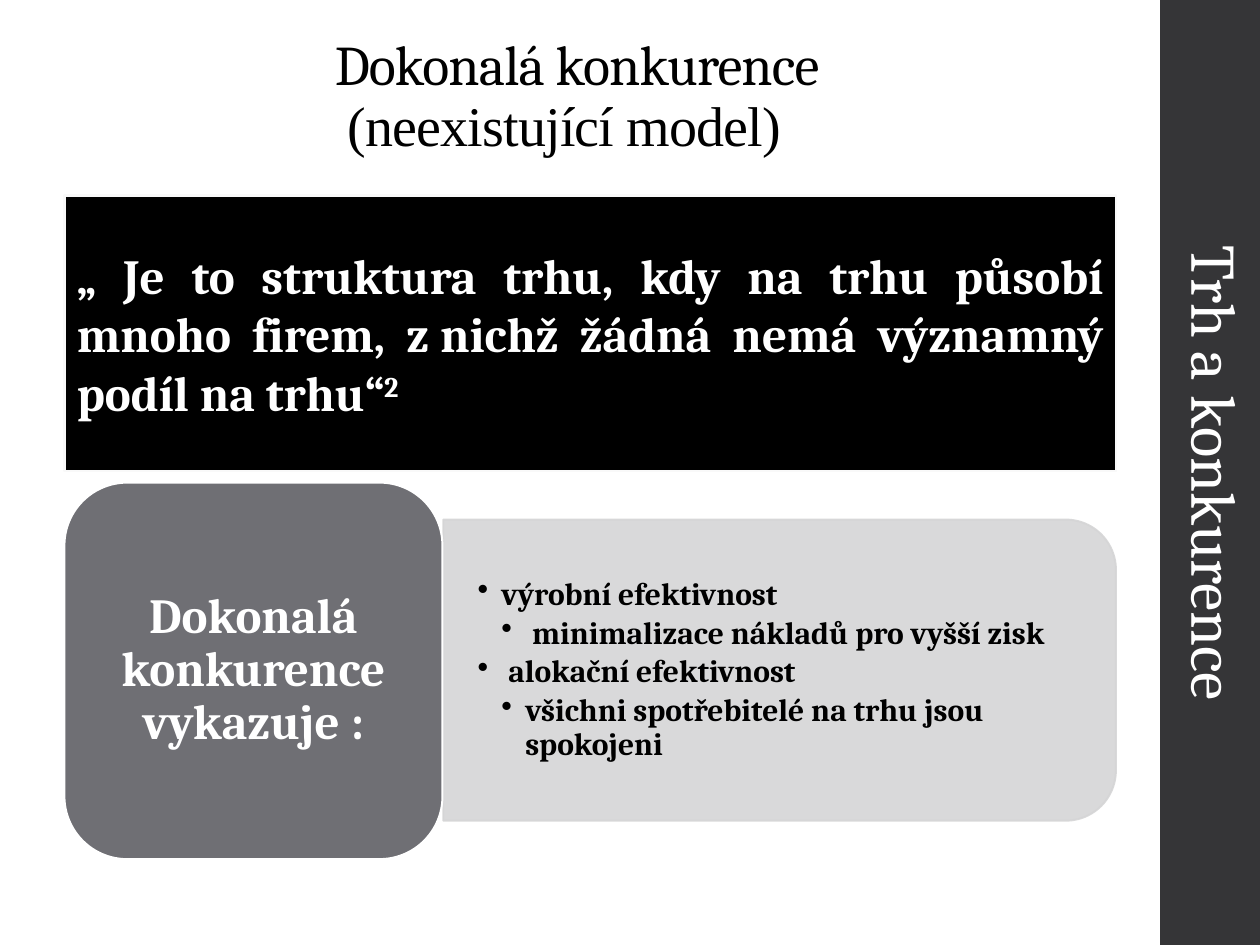
from lxml import etree
from pptx import Presentation, util as u
from pptx.dml.color import RGBColor
from pptx.enum import shapes as s, text as t
from pptx.oxml.ns import qn

# Each paragraph is a list of runs: (text, overrides of the text format)
TITLE = [[("Dokonalá konkurence", {}), ("\n", {}),
          (" (neexistující model)", {"font": "Times New Roman"})]]
QUOTE = [[("„ Je to struktura trhu, kdy na trhu působí mnoho firem, z\u00a0nichž "
           "žádná nemá významný podíl na trhu“", {}), ("2", {"baseline": 30})]]
FEATURES_HEADING = [[("Dokonalá konkurence vykazuje :", {})]]
FEATURES = [
    (1, "výrobní efektivnost"),
    (2, " minimalizace nákladů pro vyšší zisk"),
    (1, " alokační efektivnost"),
    (2, "všichni spotřebitelé na trhu jsou spokojeni"),
]
CHAPTER = [[("Trh a konkurence", {})]]

THEME = {
    "font": "Cambria",
    "black": "000000", "white": "FFFFFF", "sidebar": "353537",
    "quote_edge": "F9F9F9", "heading": "6F6F74", "panel": "D5D5D6",
    "title_size": 32, "quote_size": 28, "feature_size": 18, "chapter_size": 36,
}
SLIDE_W, SLIDE_H = 25.4, 19.05
BULLET_INDENT = 0.48


def set_alpha(color_format_parent, percent):
    """Make the solid colours found below an XML element partly transparent."""
    for color in color_format_parent.iter(qn("a:srgbClr")):
        etree.SubElement(color, qn("a:alpha")).set("val", str(percent * 1000))


def add_block(slide, kind, box, fill, edge=None, edge_width=1.1, rotation=0):
    block = slide.shapes.add_shape(kind, *(u.Cm(v) for v in box))
    block.shadow.inherit = False
    block.rotation = rotation
    block.fill.solid()
    block.fill.fore_color.rgb = RGBColor.from_string(THEME[fill])
    if edge:
        block.line.color.rgb = RGBColor.from_string(THEME[edge])
        block.line.width = u.Pt(edge_width)
    else:
        block.line.fill.background()
    return block


def add_text_area(slide, box, rotation=0):
    area = slide.shapes.add_textbox(*(u.Cm(v) for v in box))
    area.rotation = rotation
    return area


def add_run(paragraph, wording, size, color, bold, font, spacing=0, baseline=0):
    run = paragraph.add_run()
    run.text = wording
    run.font.name = font
    run.font.size = u.Pt(size)
    run.font.bold = bold
    run.font.color.rgb = RGBColor.from_string(THEME[color])
    properties = run.font._element
    if spacing:
        properties.set("spc", str(int(spacing * 100)))
    if baseline:
        properties.set("baseline", str(baseline * 1000))


def write(holder, paragraphs, *, size, color, bold=False, font=THEME["font"],
          align=t.PP_ALIGN.LEFT, anchor=t.MSO_ANCHOR.TOP, inset=(0.25, 0.13),
          line_spacing=1.0, space_after=0, spacing=0):
    """Fill a shape with paragraphs of runs; inset is (sides, top and bottom)."""
    frame = holder.text_frame
    frame.word_wrap = True
    frame.vertical_anchor = anchor
    frame.margin_left = frame.margin_right = u.Cm(inset[0])
    frame.margin_top = frame.margin_bottom = u.Cm(inset[1])
    for index, runs in enumerate(paragraphs):
        paragraph = frame.add_paragraph() if index else frame.paragraphs[0]
        paragraph.alignment = align
        paragraph.line_spacing = line_spacing
        paragraph.space_after = u.Pt(space_after)
        for wording, overrides in runs:
            if wording == "\n":
                paragraph.add_line_break()
                continue
            style = {"size": size, "color": color, "bold": bold, "font": font,
                     "spacing": spacing, **overrides}
            add_run(paragraph, wording, **style)
    return frame


def add_bullet(paragraph, level):
    paragraph.level = level
    properties = paragraph._p.get_or_add_pPr()
    properties.set("marL", str(u.Cm(BULLET_INDENT * level)))
    properties.set("indent", str(-u.Cm(BULLET_INDENT)))
    etree.SubElement(properties, qn("a:buChar")).set("char", "•")


def main():
    deck = Presentation()
    deck.slide_width, deck.slide_height = u.Cm(SLIDE_W), u.Cm(SLIDE_H)
    slide = deck.slides.add_slide(deck.slide_layouts[6])
    shape = s.MSO_SHAPE
    middle, center = t.MSO_ANCHOR.MIDDLE, t.PP_ALIGN.CENTER

    add_block(slide, shape.RECTANGLE, (23.39, 0, SLIDE_W - 23.39, SLIDE_H), "sidebar")

    title = add_text_area(slide, (6.5, 0.91, 12.8, 2.41))
    write(title, TITLE, size=THEME["title_size"], color="black",
          anchor=t.MSO_ANCHOR.BOTTOM, line_spacing=0.9, spacing=-0.5)

    quote = add_block(slide, shape.RECTANGLE, (1.3, 3.94, 21.2, 5.56), "black",
                      "quote_edge", 1.35)
    write(quote, QUOTE, size=THEME["quote_size"], color="white", bold=True,
          align=t.PP_ALIGN.JUSTIFY, anchor=middle)

    panel = add_block(slide, shape.ROUND_2_SAME_RECTANGLE, (12.68, 6.73, 6.07, 13.56),
                      "panel", "panel", rotation=90)
    set_alpha(panel._element.spPr, 90)

    features = add_text_area(slide, (8.94, 10.77, 13.26, 5.49))
    frame = write(features, [[(wording, {})] for _, wording in FEATURES],
                  size=THEME["feature_size"], color="black", bold=True, anchor=middle,
                  inset=(0.69, 0.36), line_spacing=0.9, space_after=2.7)
    for paragraph, (level, _) in zip(frame.paragraphs, FEATURES):
        add_bullet(paragraph, level)

    heading = add_block(slide, shape.ROUNDED_RECTANGLE, (1.3, 9.73, 7.62, 7.59),
                        "heading", "white")
    write(heading, FEATURES_HEADING, size=THEME["quote_size"], color="white", bold=True,
          align=center, anchor=middle, inset=(0.67, 0.5), line_spacing=0.9)

    chapter = add_text_area(slide, (14.99, 8.64, SLIDE_H, 1.8), rotation=90)
    write(chapter, CHAPTER, size=THEME["chapter_size"], color="white", align=center)

    deck.save("out.pptx")


if __name__ == "__main__":
    main()
